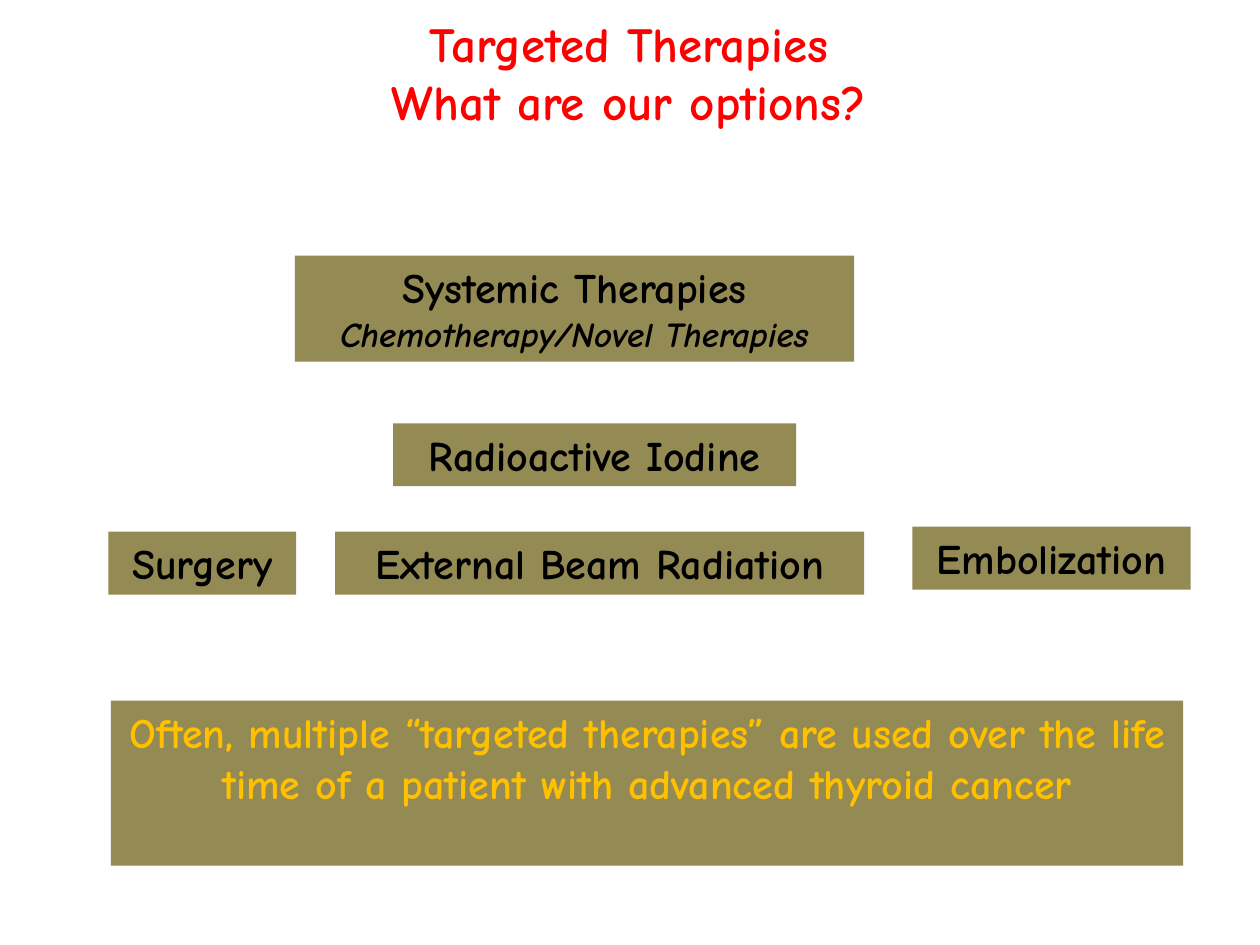
"""Build a slide that lists the targeted therapy options."""
import pptx
import pptx.dml.color
import pptx.enum.shapes
import pptx.enum.text
import pptx.util

COLUMNS, ROWS = 100, 75
COLORS = {"title": "FF0000", "box": "948A54", "text": "000000", "message": "FFC000"}
BASE = {"name": "Comic Neue", "bold": True}
TITLE = BASE | {"size": pptx.util.Pt(28)}
LABEL = BASE | {"size": pptx.util.Pt(24)}
DETAIL = BASE | {"size": pptx.util.Pt(20), "italic": True}

OPTIONS = [
    ((23.4, 20.3, 44.4, 8.4),
     [("Systemic Therapies", LABEL), ("Chemotherapy/Novel Therapies", DETAIL)]),
    ((8.6, 42.2, 14.9, 5), [("Surgery", LABEL)]),
    ((26.6, 42.2, 42, 5), [("External Beam Radiation", LABEL)]),
    ((72.4, 41.8, 22.1, 5), [("Embolization", LABEL)]),
    ((31.2, 33.6, 32, 5), [("Radioactive Iodine", LABEL)]),
]
MESSAGE = ("Often, multiple “targeted therapies” are used over the life "
           "time of a patient with advanced thyroid cancer")


def grid_area(deck, area):
    """Turn columns and rows into slide lengths."""
    left, top, width, height = area
    column, row = deck.slide_width / COLUMNS, deck.slide_height / ROWS
    return [round(length) for length in
            (left * column, top * row, width * column, height * row)]


def format_font(font, values, color):
    """Apply format values and a named colour to a font."""
    for name, value in values.items():
        setattr(font, name, value)
    font.color.rgb = pptx.dml.color.RGBColor.from_string(COLORS[color])


def write_lines(frame, lines, color):
    """Write each line as a centred paragraph."""
    for index, (text, values) in enumerate(lines):
        para = frame.add_paragraph() if index else frame.paragraphs[0]
        para.alignment = pptx.enum.text.PP_ALIGN.CENTER
        span = para.add_run()
        span.text = text
        format_font(span.font, values, color)


def add_title(deck, page, lines, area):
    """Place the title and break it into lines."""
    title = page.shapes.title
    title.left, title.top, title.width, title.height = grid_area(deck, area)
    frame = title.text_frame
    frame.vertical_anchor = pptx.enum.text.MSO_ANCHOR.MIDDLE
    para = frame.paragraphs[0]
    para.alignment = pptx.enum.text.PP_ALIGN.CENTER
    para.text = "\v".join(lines)
    for span in para.runs:
        format_font(span.font, TITLE, "title")


def add_box(deck, page, area, lines, color="text", wrap=False):
    """Add a filled rectangle with centred lines."""
    box = page.shapes.add_shape(
        pptx.enum.shapes.MSO_SHAPE.RECTANGLE, *grid_area(deck, area))
    box.shadow.inherit = False
    box.fill.solid()
    box.fill.fore_color.rgb = pptx.dml.color.RGBColor.from_string(COLORS["box"])
    box.line.fill.background()
    frame = box.text_frame
    frame.word_wrap = wrap
    frame.vertical_anchor = pptx.enum.text.MSO_ANCHOR.TOP
    write_lines(frame, lines, color)


def main():
    """Build and save the slide."""
    deck = pptx.Presentation()
    deck.slide_width = pptx.util.Inches(10)
    deck.slide_height = pptx.util.Inches(7.5)
    page = deck.slides.add_slide(deck.slide_layouts.get_by_name("Title Only"))
    add_title(deck, page, ["Targeted Therapies", "What are our options?"],
              (4.9, 0.5, 90, 10.4))
    for area, lines in OPTIONS:
        add_box(deck, page, area, lines)
    add_box(deck, page, (8.8, 55.6, 85.1, 13.1), [(MESSAGE, LABEL)],
            color="message", wrap=True)
    deck.save("out.pptx")


if __name__ == "__main__":
    main()
